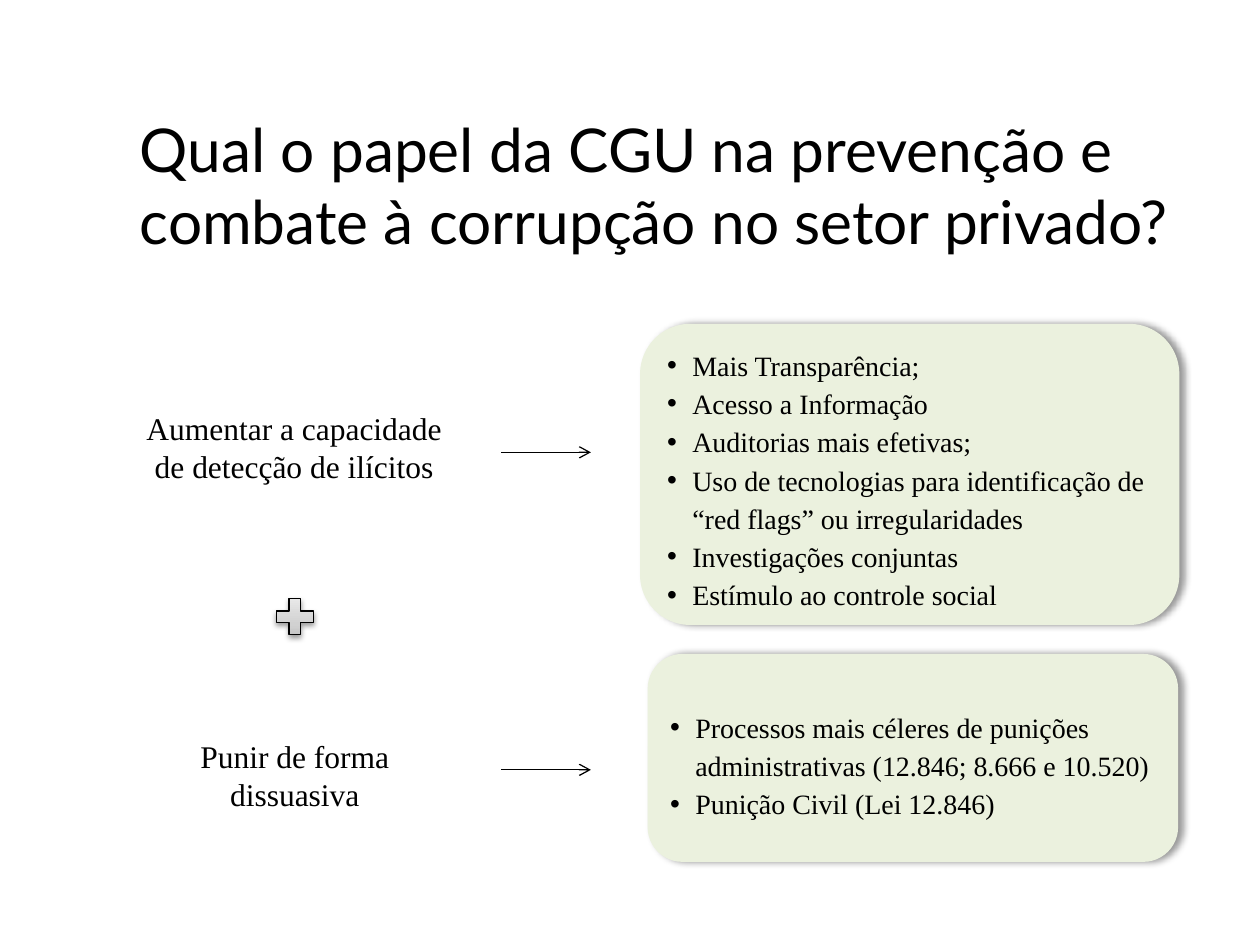
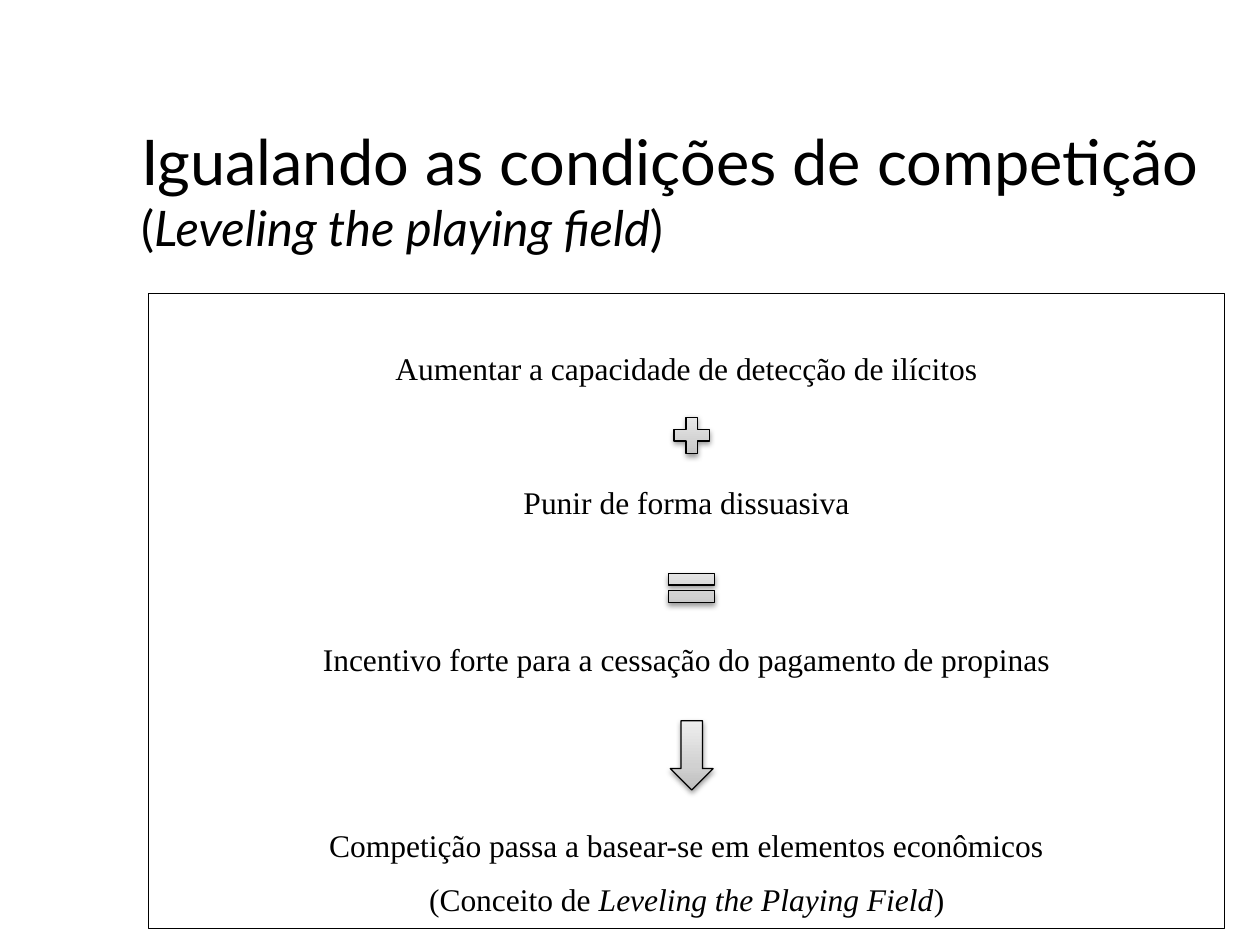
from lxml import etree
from pptx import Presentation
from pptx.dml.color import RGBColor
from pptx.enum.shapes import MSO_CONNECTOR as Connector, MSO_SHAPE as Shape
from pptx.enum.text import MSO_ANCHOR as Anchor, MSO_AUTO_SIZE as AutoSize, PP_ALIGN as Align
from pptx.oxml.ns import qn
from pptx.util import Inches, Pt

BLACK = RGBColor(0x00, 0x00, 0x00)
PALE_GREEN = RGBColor(0xEB, 0xF1, 0xDE)
GREYS = ((0, RGBColor(0xBD, 0xBD, 0xBD)), (35, RGBColor(0xD1, 0xD1, 0xD1)),
         (100, RGBColor(0xEE, 0xEE, 0xEE)))
TITLE_FONT = "Lato"
BODY_FONT = "Times New Roman"
CARD_SHADOW = (40, 4, 3, 0)
SYMBOL_SHADOW = (38, 3.1, 1.6, 90)


def add_child(parent, tag, **attributes):
    values = {name: str(value) for name, value in attributes.items()}
    return etree.SubElement(parent, qn(tag), values)


class SlideBuilder:
    def __init__(self, deck):
        self.deck = deck
        self.page = None

    def new_page(self):
        self.page = self.deck.slides.add_slide(self.deck.slide_layouts[5])

    def style(self, para, font=BODY_FONT, size=18, align=Align.CENTER):
        para.alignment = align
        para.font.name = font
        para.font.color.rgb = BLACK
        if size:
            para.font.size = Pt(size)

    def frame(self, shape, anchor=Anchor.TOP):
        frame = shape.text_frame
        frame.word_wrap = True
        frame.auto_size = AutoSize.NONE
        frame.vertical_anchor = anchor
        return frame

    def add_runs(self, para, spans):
        for text, size, italic in spans:
            span = para.add_run()
            span.text = text
            if size:
                span.font.size = Pt(size)
            if italic:
                span.font.italic = True

    def title(self, bounds, *lines, size=None):
        box = self.page.shapes.title
        box.left, box.top, box.width, box.height = map(Inches, bounds)
        para = self.frame(box).paragraphs[0]
        for number, spans in enumerate(lines):
            if number:
                para.add_line_break()
            self.add_runs(para, spans)
        self.style(para, TITLE_FONT, size, Align.LEFT)

    def label(self, bounds, text):
        box = self.page.shapes.add_textbox(*map(Inches, bounds))
        para = self.frame(box).paragraphs[0]
        para.text = text
        self.style(para)

    def shape(self, kind, bounds):
        shape = self.page.shapes.add_shape(kind, *map(Inches, bounds))
        shape.shadow.inherit = False
        return shape

    def shadow(self, shape, opacity, blur, distance, angle):
        effects = shape._element.spPr.find(qn("a:effectLst"))
        outer = add_child(effects, "a:outerShdw", blurRad=Pt(blur), dist=Pt(distance),
                          dir=angle * 60000, rotWithShape=0)
        color = add_child(outer, "a:srgbClr", val=BLACK)
        add_child(color, "a:alpha", val=opacity * 1000)

    def bullet_card(self, bounds, items, top_inset):
        card = self.shape(Shape.ROUNDED_RECTANGLE, bounds)
        card.fill.solid()
        card.fill.fore_color.rgb = PALE_GREEN
        card.line.fill.background()
        self.shadow(card, *CARD_SHADOW)
        frame = self.frame(card, Anchor.MIDDLE)
        frame.margin_top = Inches(top_inset)
        for number, item in enumerate(items):
            para = frame.add_paragraph() if number else frame.paragraphs[0]
            para.text = item
            properties = para._p.get_or_add_pPr()
            properties.set("marL", str(Inches(0.2)))
            properties.set("indent", str(Inches(-0.2)))
            add_child(properties, "a:buFont", typeface="Arial")
            add_child(properties, "a:buChar", char="•")
            para.line_spacing = 1.14
            self.style(para, size=16, align=Align.LEFT)

    def symbol(self, kind, bounds):
        symbol = self.shape(kind, bounds)
        gradient = etree.Element(qn("a:gradFill"), rotWithShape="1")
        stops = add_child(gradient, "a:gsLst")
        for position, grey in GREYS:
            stop = add_child(stops, "a:gs", pos=position * 1000)
            add_child(stop, "a:srgbClr", val=grey)
        add_child(gradient, "a:lin", ang=270 * 60000, scaled=0)
        symbol._element.spPr.find(qn("a:prstGeom")).addnext(gradient)
        symbol.line.color.rgb = BLACK
        symbol.line.width = Pt(0.75)
        self.shadow(symbol, *SYMBOL_SHADOW)

    def arrow(self, left, right, height):
        arrow = self.page.shapes.add_connector(
            Connector.STRAIGHT, Inches(left), Inches(height), Inches(right), Inches(height))
        arrow.line.color.rgb = BLACK
        arrow.line.width = Pt(0.75)
        add_child(arrow.line._ln, "a:tailEnd", type="arrow")
        add_child(arrow._element.spPr, "a:effectLst")

    def framed_text(self, bounds, top_inset, lines):
        panel = self.shape(Shape.RECTANGLE, bounds)
        panel.fill.background()
        panel.line.color.rgb = BLACK
        panel.line.width = Pt(0.5)
        frame = self.frame(panel)
        frame.margin_left = frame.margin_right = frame.margin_bottom = 0
        frame.margin_top = Inches(top_inset)
        for number, (gap, spans) in enumerate(lines):
            para = frame.add_paragraph() if number else frame.paragraphs[0]
            self.add_runs(para, spans)
            self.style(para)
            if gap:
                para.space_before = Pt(gap)


def build_role_page(builder):
    builder.new_page()
    builder.title((1.01, 0.84, 8.99, 1.26), [
        ("Qual o papel da CGU na prevenção e combate à corrupção no setor privado?", None, False),
    ], size=34.5)
    builder.bullet_card((5.08, 2.57, 4.28, 2.39), [
        "Mais Transparência;",
        "Acesso a Informação",
        "Auditorias mais efetivas;",
        "Uso de tecnologias para identificação de “red flags” ou irregularidades",
        "Investigações conjuntas",
        "Estímulo ao controle social",
    ], top_inset=0.1)
    builder.bullet_card((5.14, 5.19, 4.21, 1.65), [
        "Processos mais céleres de punições administrativas (12.846; 8.666 e 10.520)",
        "Punição Civil (Lei 12.846)",
    ], top_inset=0.13)
    builder.label((1.01, 3.2, 2.65, 0.71), "Aumentar a capacidade de detecção de ilícitos")
    builder.label((1.12, 5.8, 2.44, 0.71), "Punir de forma dissuasiva")
    for height in (3.59, 6.11):
        builder.arrow(3.98, 4.69, height)
    builder.symbol(Shape.MATH_PLUS, (2.14, 4.7, 0.4, 0.39))


def build_competition_page(builder):
    builder.new_page()
    builder.framed_text((1.18, 2.33, 8.54, 5.04), 0.44, [
        (0, [("Aumentar a capacidade de detecção de ilícitos", None, False)]),
        (55, [("Punir de forma dissuasiva", None, False)]),
        (68, [("Incentivo forte para a cessação do pagamento de propinas", None, False)]),
        (85, [("Competição passa a basear-se em elementos econômicos", None, False)]),
        (9, [("(Conceito de ", None, False), ("Leveling the Playing Field", None, True),
             (")", None, False)]),
    ])
    center = 5.49
    for kind, top, width, height in (
        (Shape.MATH_PLUS, 3.26, 0.38, 0.39),
        (Shape.MATH_EQUAL, 4.47, 0.5, 0.39),
        (Shape.DOWN_ARROW, 5.72, 0.34, 0.55),
    ):
        builder.symbol(kind, (center - width / 2, top, width, height))
    builder.title(
        (1.02, 0.92, 8.94, 1.18),
        [("Igualando as condições de competição", 36, False)],
        [("(", 28, False), ("Leveling the playing field", 28, True), (")", 28, False)],
    )


def main():
    deck = Presentation()
    deck.slide_width = Inches(10)
    deck.slide_height = Inches(7.5)
    builder = SlideBuilder(deck)
    build_role_page(builder)
    build_competition_page(builder)
    deck.save("out.pptx")


if __name__ == "__main__":
    main()
